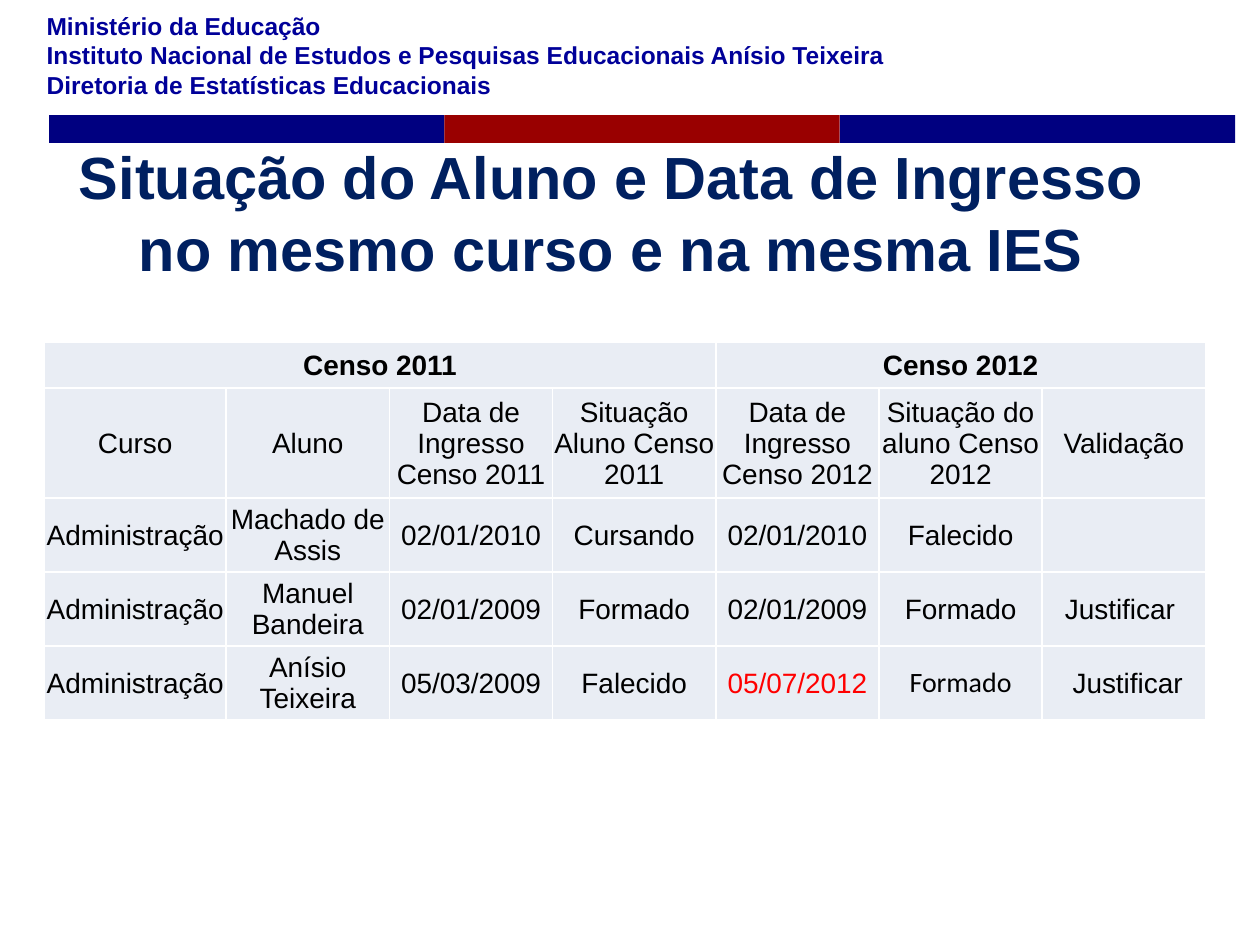
from lxml.etree import SubElement
from pptx import Presentation
from pptx.dml.color import RGBColor
from pptx.enum.shapes import MSO_SHAPE
from pptx.enum.text import MSO_ANCHOR, PP_ALIGN
from pptx.oxml import parse_xml
from pptx.oxml.ns import nsdecls, qn
from pptx.util import Cm, Pt

NAVY, RED = "000080", "990000"
HEADER = [
    "Ministério da Educação",
    "Instituto Nacional de Estudos e Pesquisas Educacionais Anísio Teixeira",
    "Diretoria de Estatísticas Educacionais",
]
TITLE = "Situação do Aluno e Data de Ingresso no mesmo curso e na mesma IES"
GROUPS = [("Censo 2011", 0, 3), ("Censo 2012", 4, 6)]
ROWS = [
    ["Curso", "Aluno", "Data de Ingresso Censo 2011", "Situação Aluno Censo 2011",
     "Data de Ingresso Censo 2012", "Situação do aluno Censo 2012", "Validação"],
    ["Administração", "Machado de Assis", "02/01/2010", "Cursando",
     "02/01/2010", "Falecido", ""],
    ["Administração", "Manuel Bandeira", "02/01/2009", "Formado",
     "02/01/2009", "Formado", "Justificar "],
    ["Administração", "Anísio Teixeira", "05/03/2009", "Falecido",
     "05/07/2012", "Formado", " Justificar"],
]
SPECIAL_FORMATS = {(4, 4): {"color": "FF0000"}, (4, 5): {"font": "Calibri"}}
COLUMN_WIDTHS = [3.67] + [3.29] * 6
ROW_HEIGHTS = [0.93, 2.22] + [1.49] * 3


def rgb(value):
    return RGBColor.from_string(value)


def write(para, text, font="Arial", size=16, color="000000", bold=False,
          align=PP_ALIGN.CENTER, spacing=None):
    para.alignment = align
    if spacing:
        para.line_spacing = Pt(spacing)
    span = para.add_run()
    span.text = text
    span.font.name = font
    span.font.size = Pt(size)
    span.font.bold = bold
    span.font.color.rgb = rgb(color)


def add_borders(cell, color, width):
    """Put a solid line on all four sides, ahead of the cell's fill."""
    properties = cell._tc.get_or_add_tcPr()
    for position, side in enumerate(("lnL", "lnR", "lnT", "lnB")):
        line = parse_xml(f'<a:{side} {nsdecls("a")} w="{Pt(width)}"/>')
        fill = SubElement(line, qn("a:solidFill"))
        SubElement(fill, qn("a:srgbClr"), val=color)
        properties.insert(position, line)


class SlideBuilder:
    """Holds the table style and the slide being built."""
    cell_fill = "E9EDF4"
    border = "FFFFFF"

    def __init__(self, page):
        self.page = page

    def bar(self, left, top, width, height, color):
        bar = self.page.shapes.add_shape(
            MSO_SHAPE.RECTANGLE, Cm(left), Cm(top), Cm(width), Cm(height))
        bar.shadow.inherit = False
        bar.fill.solid()
        bar.fill.fore_color.rgb = rgb(color)
        bar.line.fill.background()

    def text(self, left, top, width, height, lines, bottom=0.13, **style):
        box = self.page.shapes.add_textbox(Cm(left), Cm(top), Cm(width), Cm(height))
        frame = box.text_frame
        frame.word_wrap = True
        frame.vertical_anchor = MSO_ANCHOR.MIDDLE
        frame.margin_top, frame.margin_bottom = Cm(0.13), Cm(bottom)
        for index, line in enumerate(lines):
            para = frame.add_paragraph() if index else frame.paragraphs[0]
            write(para, line, **style)

    def table(self, left, top, widths, heights):
        table = self.page.shapes.add_table(
            len(heights), len(widths), Cm(left), Cm(top),
            Cm(sum(widths)), Cm(sum(heights))).table
        for column, width in zip(table.columns, widths):
            column.width = Cm(width)
        for row, height in zip(table.rows, heights):
            row.height = Cm(height)
        for cell in table.iter_cells():
            cell.fill.solid()
            cell.fill.fore_color.rgb = rgb(self.cell_fill)
            cell.vertical_anchor = MSO_ANCHOR.MIDDLE
            cell.margin_left = cell.margin_right = cell.margin_top = Cm(0.02)
            cell.margin_bottom = Cm(0)
            add_borders(cell, self.border, 1)
        return table


def main():
    deck = Presentation()
    deck.slide_width, deck.slide_height = Cm(25.4), Cm(19.05)
    builder = SlideBuilder(deck.slides.add_slide(deck.slide_layouts[6]))

    bar_width = 7.97
    for index, color in enumerate((NAVY, RED, NAVY)):
        builder.bar(0.99 + index * bar_width, 2.32, bar_width, 0.56, color)
    builder.text(0.69, 0.08, 24.51, 2.06, HEADER, size=14, color="000099",
                 bold=True, align=PP_ALIGN.LEFT, spacing=16.8)
    builder.text(0.89, 3.33, 22.86, 3.2, [TITLE], bottom=1.45, size=34,
                 color="002060", bold=True, spacing=41)

    table = builder.table(0.89, 6.89, COLUMN_WIDTHS, ROW_HEIGHTS)
    for label, first, last in GROUPS:
        table.cell(0, first).merge(table.cell(0, last))
        write(table.cell(0, first).text_frame.paragraphs[0], label, bold=True)
    for row, values in enumerate(ROWS, start=1):
        for column, value in enumerate(values):
            if value:
                write(table.cell(row, column).text_frame.paragraphs[0], value,
                      **SPECIAL_FORMATS.get((row, column), {}))

    deck.save("out.pptx")


if __name__ == "__main__":
    main()
